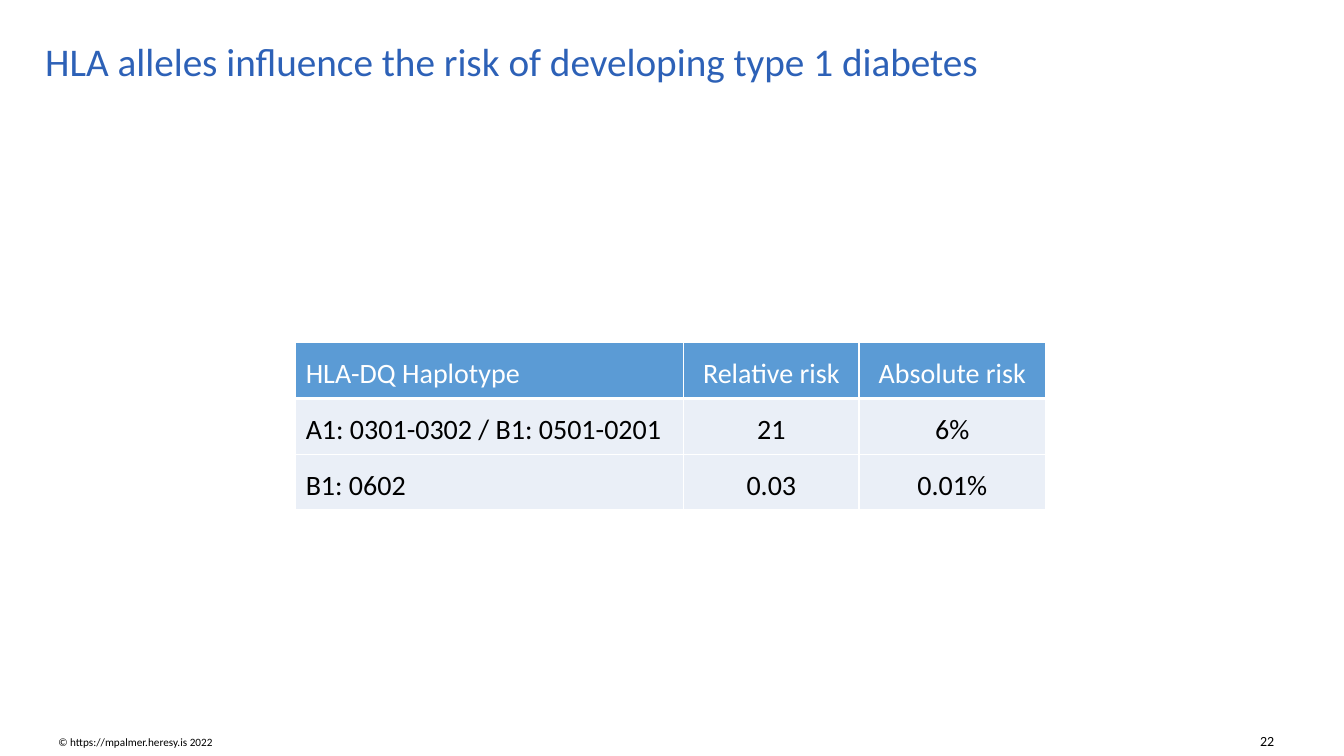
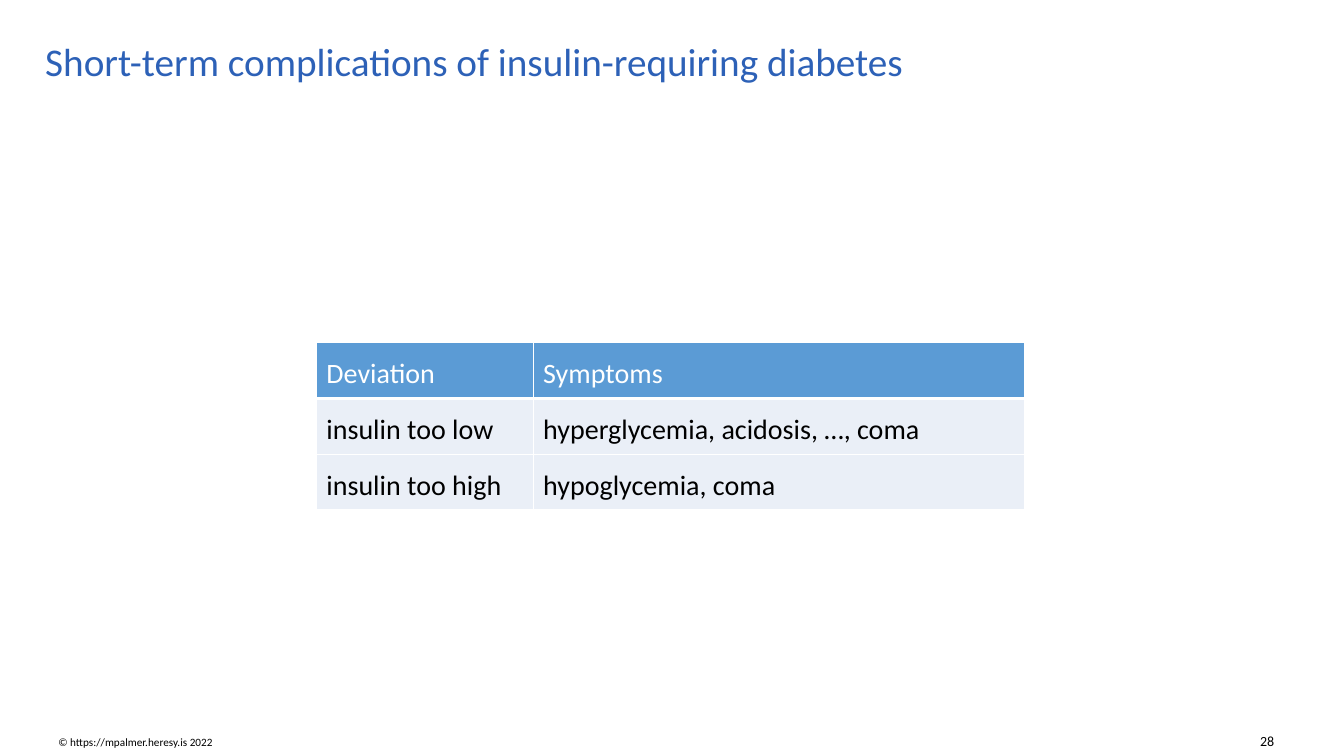
"""Build two diabetes lecture slides, each with one table."""
from dataclasses import dataclass

from lxml.etree import SubElement
from pptx import Presentation
from pptx.dml.color import RGBColor
from pptx.enum.text import MSO_ANCHOR as Anchor, PP_ALIGN as Align
from pptx.oxml.ns import qn
from pptx.util import Inches, Pt


@dataclass(frozen=True)
class Theme:
    """Colours, font, type sizes and border widths in points."""
    font: str = "Calibri"
    title: str = "2D61B7"
    body: str = "000000"
    light: str = "FFFFFF"
    header_fill: str = "5B9BD5"
    row_fill: str = "EAEFF7"
    title_size: int = 28
    table_size: int = 20
    page_size: int = 10
    credit_size: int = 8
    rule: int = 1
    header_rule: int = 3


THEME = Theme()
WIDTH, HEIGHT = Inches(13.33), Inches(7.5)
TITLE_BOX = (2.63, 3.2, 95.25, 10.4)
CREDIT_BOX = (3.6, 96.67, 23.55, 3.07)
PAGE_BOX = (90.3, 96.13, 5.25, 3.6)
TABLE_CENTRE, TABLE_TOP, ROW_HEIGHT = 49.9, 45.33, 6.67
CREDIT = "© https://mpalmer.heresy.is 2022"


def across(percent):
    """Turn a percentage of the slide width into a length."""
    return int(WIDTH * percent / 100)


def down(percent):
    """Turn a percentage of the slide height into a length."""
    return int(HEIGHT * percent / 100)


def write(frame, text, size, colour, align=Align.LEFT):
    """Put one styled paragraph in a text frame and return it."""
    paragraph = frame.paragraphs[0]
    paragraph.text = text
    paragraph.alignment = align
    font = paragraph.font
    font.name, font.size, font.bold = THEME.font, Pt(size), False
    font.color.rgb = RGBColor.from_string(colour)
    return paragraph


def add_label(slide, box, text, size, colour, anchor=Anchor.BOTTOM, align=Align.LEFT):
    """Add a wrapped line of text in a box given in percentages."""
    left, top, width, height = box
    label = slide.shapes.add_textbox(across(left), down(top), across(width), down(height))
    frame = label.text_frame
    frame.word_wrap, frame.vertical_anchor = True, anchor
    return write(frame, text, size, colour, align)


def add_borders(cell, bottom):
    """Draw light borders around a cell, with its own bottom width."""
    properties = cell._tc.get_or_add_tcPr()
    widths = {"lnL": THEME.rule, "lnR": THEME.rule, "lnT": THEME.rule, "lnB": bottom}
    for position, (side, width) in enumerate(widths.items()):
        line = SubElement(properties, qn(f"a:{side}"), w=str(Pt(width)))
        fill = SubElement(line, qn("a:solidFill"))
        SubElement(fill, qn("a:srgbClr"), val=THEME.light)
        properties.insert(position, line)


def fill_cell(cell, text, is_header, align):
    """Style one table cell and write its text."""
    cell.margin_left = cell.margin_right = Inches(0.1)
    cell.margin_top, cell.margin_bottom = Inches(0.14), Inches(0.08)
    cell.fill.solid()
    cell.fill.fore_color.rgb = RGBColor.from_string(
        THEME.header_fill if is_header else THEME.row_fill)
    write(cell.text_frame, text, THEME.table_size,
          THEME.light if is_header else THEME.body, align)
    add_borders(cell, THEME.header_rule if is_header else THEME.rule)


def add_grid(slide, rows, columns):
    """Add a centred table from rows of text and (width, alignment) columns."""
    total = sum(width for width, _ in columns)
    table = slide.shapes.add_table(
        len(rows), len(columns), across(TABLE_CENTRE - total / 2), down(TABLE_TOP),
        across(total), down(ROW_HEIGHT * len(rows))).table
    table.horz_banding = False
    for column, (width, _) in zip(table.columns, columns):
        column.width = across(width)
    for r, row in enumerate(rows):
        for c, (text, (_, align)) in enumerate(zip(row, columns)):
            fill_cell(table.cell(r, c), text, r == 0, align)


def add_slide(deck, page, title, rows, columns):
    """Add a slide with footer, page number, title and table."""
    slide = deck.slides.add_slide(deck.slide_layouts[6])
    add_label(slide, CREDIT_BOX, CREDIT, THEME.credit_size, THEME.body)
    add_label(slide, PAGE_BOX, str(page), THEME.page_size, THEME.body, align=Align.RIGHT)
    heading = add_label(slide, TITLE_BOX, title, THEME.title_size, THEME.title, Anchor.MIDDLE)
    heading.line_spacing = 0.9
    add_grid(slide, rows, columns)


def main():
    """Build and save the deck."""
    deck = Presentation()
    deck.slide_width, deck.slide_height = WIDTH, HEIGHT
    add_slide(
        deck, 22, "HLA alleles influence the risk of developing type 1 diabetes",
        [("HLA-DQ Haplotype", "Relative risk", "Absolute risk"),
         ("A1: 0301-0302 / B1: 0501-0201", "21", "6%"),
         ("B1: 0602", "0.03", "0.01%")],
        [(28.87, Align.LEFT), (13.05, Align.CENTER), (13.88, Align.CENTER)])
    add_slide(
        deck, 28, "Short-term complications of insulin-requiring diabetes",
        [("Deviation", "Symptoms"),
         ("insulin too low", "hyperglycemia, acidosis, …, coma"),
         ("insulin too high", "hypoglycemia, coma")],
        [(16.13, Align.LEFT), (36.6, Align.LEFT)])
    deck.save("out.pptx")


if __name__ == "__main__":
    main()
